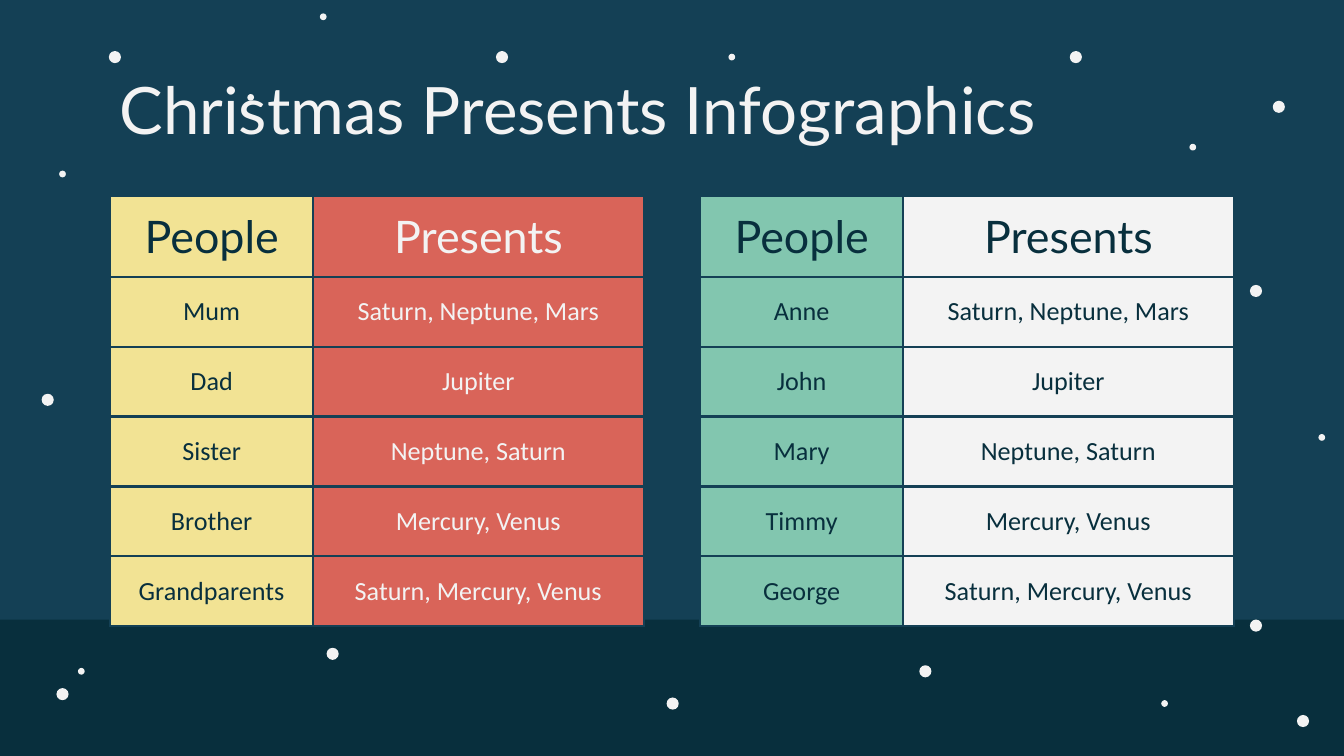
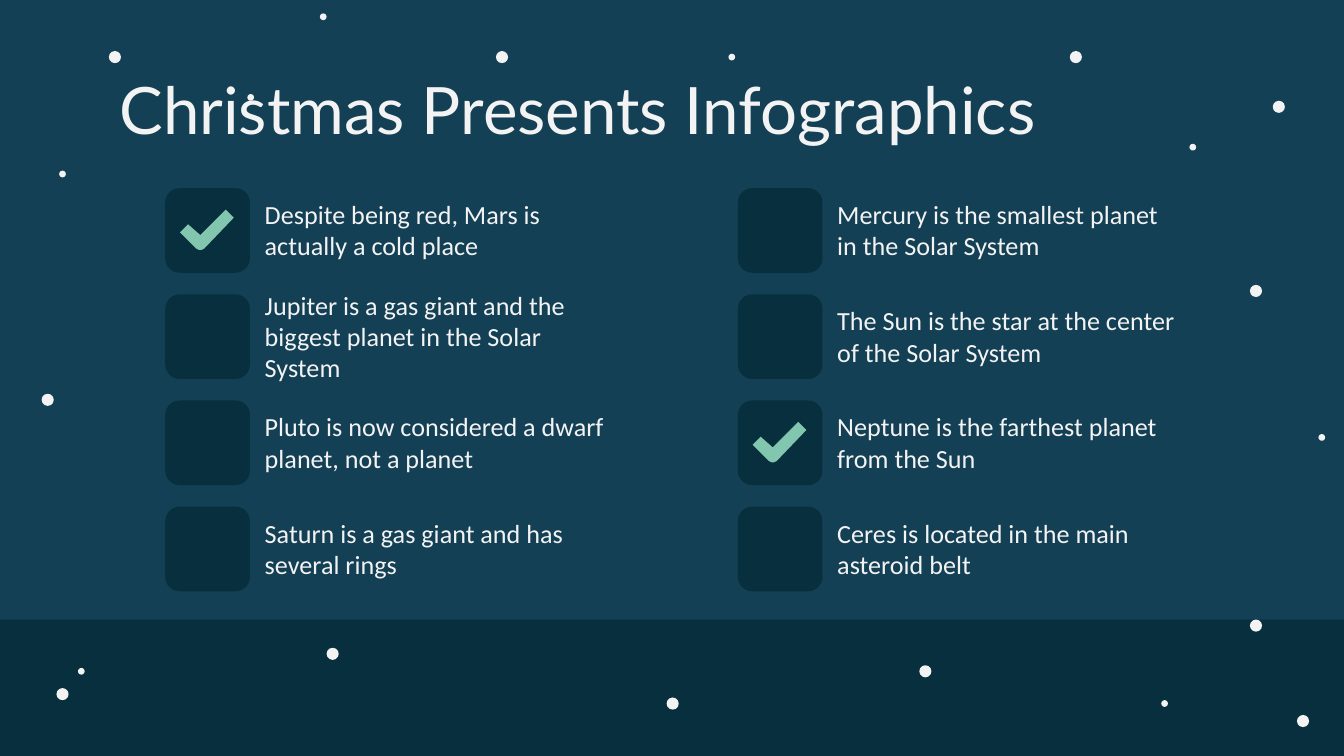
from dataclasses import dataclass

from lxml.etree import SubElement
from pptx import Presentation
from pptx.dml.color import RGBColor
from pptx.enum.shapes import MSO_SHAPE
from pptx.enum.text import MSO_ANCHOR, PP_ALIGN
from pptx.oxml.ns import qn
from pptx.util import Inches, Pt


@dataclass(frozen=True)
class Theme:
    night: str = "144055"
    ground: str = "082F3D"
    snow: str = "F3F3F3"
    yellow: str = "F2E394"
    red: str = "D96459"
    green: str = "82C6AF"
    heading_font: str = "Lato"
    body_font: str = "Calibri"
    title_size: int = 35
    header_size: int = 24
    body_size: int = 14
    border_width: float = 1.5


THEME = Theme()
TITLE = "Christmas Presents Infographics"

# Snowfall: flake diameter -> left and top of each flake
SNOWFALL = {
    0.09: [(0.81, 0.38), (9.3, 2.12), (7.96, 0.38), (6.84, 4.95), (3.69, 0.38),
           (9.65, 5.32), (0.31, 2.93), (9.47, 0.75), (4.96, 5.19), (9.3, 4.61),
           (2.43, 4.82), (0.42, 5.12)],
    0.05: [(0.44, 1.27), (8.85, 1.07), (8.64, 5.21), (0.58, 4.97), (5.42, 0.4),
           (2.38, 0.1), (1.84, 0.7), (9.81, 3.23)],
}

# Check mark outline, in hundredths of an inch
TICK = [(34, 0), (16, 18), (15, 19), (14, 18), (6, 11), (0, 17), (12, 29),
        (14, 30), (16, 30), (18, 29), (40, 6)]

PRESENTS = ["Saturn, Neptune, Mars", "Jupiter", "Neptune, Saturn",
            "Mercury, Venus", "Saturn, Mercury, Venus"]
FAMILY = ["Mum", "Dad", "Sister", "Brother", "Grandparents"]
FRIENDS = ["Anne", "John", "Mary", "Timmy", "George"]

# Checklist columns: left edge -> (fact, is ticked)
CHECKLISTS = {
    1.23: [("Despite being red, Mars is actually a cold place", True),
           ("Jupiter is a gas giant and the biggest planet in the Solar System", False),
           ("Pluto is now considered a dwarf planet, not a planet", False),
           ("Saturn is a gas giant and has several rings", False)],
    5.49: [("Mercury is the smallest planet in the Solar System", False),
           ("The Sun is the star at the center of the Solar System", False),
           ("Neptune is the farthest planet from the Sun", True),
           ("Ceres is located in the main asteroid belt", False)],
}


def rgb(color):
    return RGBColor.from_string(color)


class Deck:
    def __init__(self, theme):
        self.theme = theme
        self.prs = Presentation()
        self.prs.slide_width = Inches(10)
        self.prs.slide_height = Inches(5.625)
        self.slide = None

    def new_slide(self, title):
        """Start a slide with the shared night sky, ground, snow and title."""
        theme = self.theme
        self.slide = self.prs.slides.add_slide(self.prs.slide_layouts[6])
        background = self.slide.background.fill
        background.solid()
        background.fore_color.rgb = rgb(theme.night)
        self.block(MSO_SHAPE.RECTANGLE, 0, 4.61, 10, 1.02, theme.ground)
        for diameter, flakes in SNOWFALL.items():
            for left, top in flakes:
                self.block(MSO_SHAPE.OVAL, left, top, diameter, diameter, theme.snow)
        self.text(title, 0.79, 0.49, 8.43, 0.63, theme.heading_font,
                  theme.title_size, inset=0.1)

    def paint(self, shape, color):
        shape.shadow.inherit = False
        shape.fill.solid()
        shape.fill.fore_color.rgb = rgb(color)
        shape.line.fill.background()

    def block(self, preset, left, top, width, height, color):
        shape = self.slide.shapes.add_shape(
            preset, Inches(left), Inches(top), Inches(width), Inches(height))
        self.paint(shape, color)
        return shape

    def style_text(self, frame, font_name, size, color):
        for paragraph in frame.paragraphs:
            for run in paragraph.runs:
                run.font.name = font_name
                run.font.size = Pt(size)
                run.font.color.rgb = rgb(color)

    def text(self, words, left, top, width, height, font_name, size, inset=0):
        frame = self.slide.shapes.add_textbox(
            Inches(left), Inches(top), Inches(width), Inches(height)).text_frame
        frame.word_wrap = True
        frame.vertical_anchor = MSO_ANCHOR.MIDDLE
        frame.margin_left = frame.margin_right = Inches(inset)
        frame.margin_top = frame.margin_bottom = Inches(inset)
        frame.text = words
        self.style_text(frame, font_name, size, self.theme.snow)

    def tick(self, left, top):
        outline = self.slide.shapes.build_freeform(*TICK[0], scale=Inches(0.01))
        outline.add_line_segments(TICK[1:], close=True)
        self.paint(outline.convert_to_shape(Inches(left), Inches(top)), self.theme.green)

    def check_item(self, fact, ticked, left, top):
        theme = self.theme
        self.text(fact, left + 0.74, top + 0.09, 2.54, 0.44,
                  theme.body_font, theme.body_size)
        checkbox = self.block(MSO_SHAPE.ROUNDED_RECTANGLE, left, top, 0.63, 0.63,
                              theme.ground)
        checkbox.adjustments[0] = 0.17
        if ticked:
            self.tick(left + 0.11, top + 0.16)

    def cell_borders(self, cell):
        properties = cell._tc.get_or_add_tcPr()
        for side in ("a:lnL", "a:lnR", "a:lnT", "a:lnB"):
            line = SubElement(properties, qn(side), w=str(Pt(self.theme.border_width)))
            fill = SubElement(line, qn("a:solidFill"))
            SubElement(fill, qn("a:srgbClr"), val=self.theme.night)

    def present_table(self, people, left, columns):
        """Draw a gift list; columns holds (width, fill, text colour)."""
        theme = self.theme
        rows = [("People", "Presents"), *zip(people, PRESENTS)]
        width = sum(column[0] for column in columns)
        table = self.slide.shapes.add_table(
            len(rows), len(columns), Inches(left), Inches(1.46),
            Inches(width), Inches(0.52 * len(rows))).table
        for c, (column_width, fill, text_color) in enumerate(columns):
            table.columns[c].width = Inches(column_width)
            for r, row in enumerate(rows):
                cell = table.cell(r, c)
                self.cell_borders(cell)
                cell.fill.solid()
                cell.fill.fore_color.rgb = rgb(fill)
                cell.vertical_anchor = MSO_ANCHOR.MIDDLE
                cell.margin_left = cell.margin_right = Inches(0.1)
                cell.margin_top = cell.margin_bottom = Inches(0.1)
                cell.text_frame.text = row[c]
                cell.text_frame.paragraphs[0].alignment = PP_ALIGN.CENTER
                font_name, size = ((theme.body_font, theme.body_size) if r
                                   else (theme.heading_font, theme.header_size))
                self.style_text(cell.text_frame, font_name, size, text_color)


def main():
    deck = Deck(THEME)

    # Slide 1: gift lists for family and friends
    deck.new_slide(TITLE)
    deck.present_table(FAMILY, 0.82, [(1.51, THEME.yellow, THEME.ground),
                                      (2.46, THEME.red, THEME.snow)])
    deck.present_table(FRIENDS, 5.21, [(1.51, THEME.green, THEME.ground),
                                       (2.46, THEME.snow, THEME.ground)])

    # Slide 2: two-column checklist
    deck.new_slide(TITLE)
    for left, facts in CHECKLISTS.items():
        for i, (fact, ticked) in enumerate(facts):
            deck.check_item(fact, ticked, left, 1.4 + 0.79 * i)

    deck.prs.save("out.pptx")


if __name__ == "__main__":
    main()
